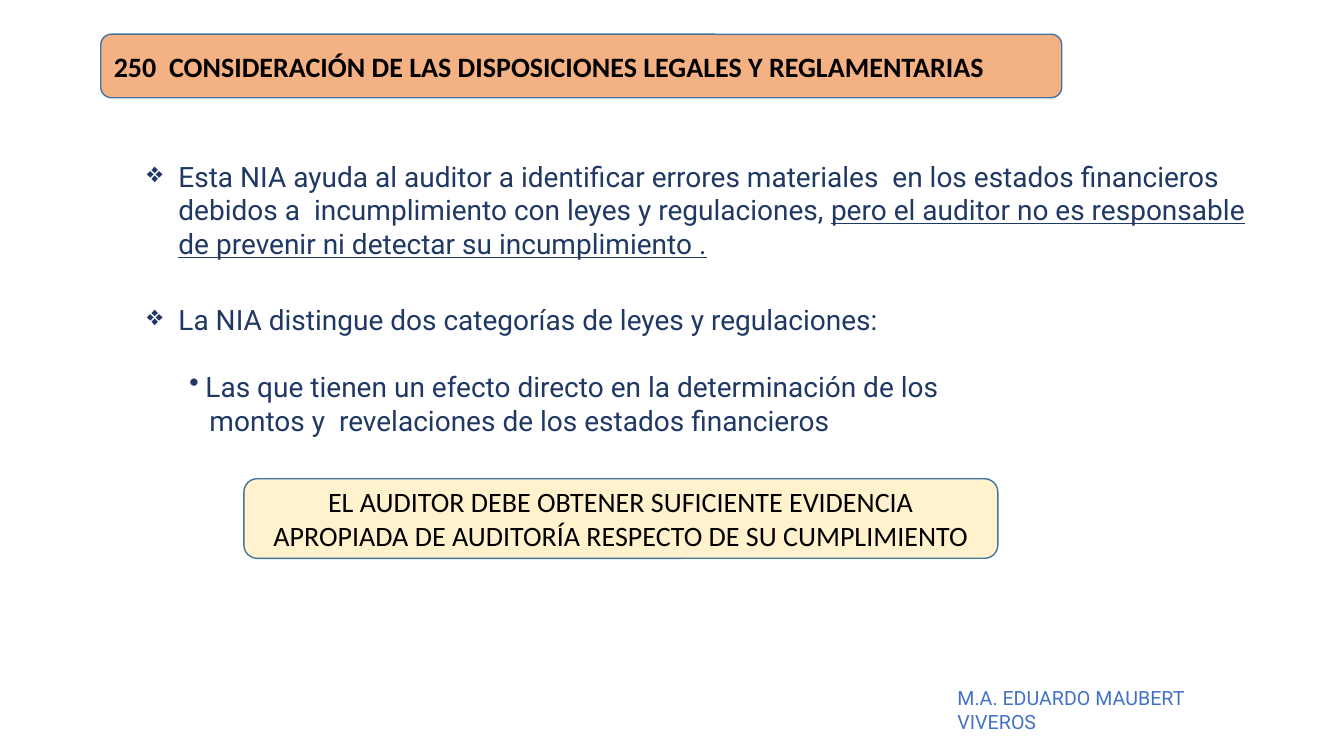
"""Build the slide on NIA 250, laws and regulations."""
from dataclasses import dataclass

from lxml import etree
from pptx import Presentation
from pptx.dml.color import RGBColor
from pptx.enum.shapes import MSO_SHAPE
from pptx.enum.text import MSO_ANCHOR, MSO_AUTO_SIZE, PP_ALIGN
from pptx.oxml.ns import qn
from pptx.slide import Slide
from pptx.text.text import TextFrame
from pptx.util import Inches, Pt

ROUND = MSO_SHAPE.ROUNDED_RECTANGLE
MIDDLE, TOP = MSO_ANCHOR.MIDDLE, MSO_ANCHOR.TOP
LEFT, CENTER = PP_ALIGN.LEFT, PP_ALIGN.CENTER
GROW = MSO_AUTO_SIZE.SHAPE_TO_FIT_TEXT
WIDE, HIGH = Inches(13.33), Inches(7.5)


@dataclass(frozen=True)
class Theme:
    """Colours, fonts and type sizes."""
    navy: str = "203864"
    blue: str = "4472C4"
    black: str = "000000"
    edge: str = "43739E"
    peach: str = "F4B183"
    cream: str = "FFF2CC"
    head: str = "Calibri"
    body: str = "Roboto"
    large: int = 20
    small: int = 14
    line: int = 1


THEME = Theme()


@dataclass(frozen=True)
class Area:
    """A place on the slide, in percent of its width and height."""
    left: float
    top: float
    width: float
    height: float

    def box(self) -> tuple[int, int, int, int]:
        """Give the place as slide lengths."""
        return (across(self.left), down(self.top),
                across(self.width), down(self.height))


@dataclass(frozen=True)
class Style:
    """The look of a text."""
    font: str
    color: str
    size: int = THEME.large
    bold: bool = False
    align: PP_ALIGN = LEFT


@dataclass(frozen=True)
class Span:
    """A run of text."""
    text: str
    under: bool = False


@dataclass(frozen=True)
class Para:
    """A paragraph, with indents in percent of the slide's width."""
    spans: tuple[Span, ...]
    bullet: str = ""
    margin: float = 0
    hang: float = 0
    before: int = 0


@dataclass(frozen=True)
class Block:
    """A text box, or a filled panel if a fill is given."""
    area: Area
    style: Style
    paras: tuple[Para, ...]
    fill: str = ""


def across(share: float) -> int:
    """Turn a percent of the width into a length."""
    return round(WIDE * share / 100)


def down(share: float) -> int:
    """Turn a percent of the height into a length."""
    return round(HIGH * share / 100)


def rgb(code: str) -> RGBColor:
    """Turn a hex code into a colour."""
    return RGBColor.from_string(code)


def write(frame: TextFrame, style: Style, paras: tuple[Para, ...]) -> None:
    """Fill a text frame run by run."""
    for index, para in enumerate(paras):
        item = frame.add_paragraph() if index else frame.paragraphs[0]
        item.alignment = style.align
        item.space_before = Pt(para.before)
        props = item._p.get_or_add_pPr()
        props.set("marL", str(across(para.margin)))
        props.set("indent", str(-across(para.hang)))
        if para.bullet:
            mark = etree.SubElement(props, qn("a:buChar"))
            mark.set("char", para.bullet)
        for span in para.spans:
            run = item.add_run()
            run.text = span.text
            font = run.font
            font.name, font.size = style.font, Pt(style.size)
            font.bold = style.bold
            font.underline = span.under
            font.color.rgb = rgb(style.color)


def draw(slide: Slide, block: Block) -> None:
    """Draw one block."""
    if block.fill:
        shape = slide.shapes.add_shape(ROUND, *block.area.box())
        shape.shadow.inherit = False
        shape.fill.solid()
        shape.fill.fore_color.rgb = rgb(block.fill)
        shape.line.color.rgb = rgb(THEME.edge)
        shape.line.width = Pt(THEME.line)
    else:
        shape = slide.shapes.add_textbox(*block.area.box())
        shape.text_frame.auto_size = GROW
    frame = shape.text_frame
    frame.word_wrap = True
    frame.vertical_anchor = MIDDLE if block.fill else TOP
    write(frame, block.style, block.paras)


BODY = Style(THEME.body, THEME.navy)
GAP = 24

BLOCKS = (
    Block(Area(10.2, 20.4, 85.9, 14.8), BODY, (
        Para((
            Span("Esta NIA ayuda al auditor a identificar errores materiales  en los "
                 "estados financieros debidos a  incumplimiento con leyes y regulaciones, "),
            Span("pero el auditor no es responsable de prevenir ni detectar "
                 "su incumplimiento .", True),
        ), "❖", 2.34, 2.34),
    )),
    Block(Area(7.5, 4.53, 71.5, 8.4), Style(THEME.head, THEME.black, bold=True), (
        Para((Span("250  CONSIDERACIÓN DE LAS DISPOSICIONES LEGALES Y REGLAMENTARIAS"),)),
    ), THEME.peach),
    Block(Area(70.5, 90.13, 23.7, 4.53), Style(THEME.body, THEME.blue, THEME.small), (
        Para((Span("M.A. EDUARDO MAUBERT VIVEROS"),)),
    )),
    Block(Area(10.2, 39.33, 85.9, 19.33), BODY, (
        Para((Span("La NIA distingue dos categorías de leyes y regulaciones:"),),
             "❖", 2.34, 2.34),
        Para((Span("Las que tienen un efecto directo en la determinación de los"),),
             "•", 4.35, 1.2, GAP),
        Para((Span("montos y  revelaciones de los estados financieros"),), margin=4.65),
    )),
    Block(Area(18.15, 63.33, 56.1, 10.53),
          Style(THEME.head, THEME.black, align=CENTER), (
        Para((Span("EL AUDITOR DEBE OBTENER SUFICIENTE EVIDENCIA APROPIADA "
                   "DE AUDITORÍA RESPECTO DE SU CUMPLIMIENTO"),)),
    ), THEME.cream),
)


def main() -> None:
    """Build and save the slide."""
    deck = Presentation()
    deck.slide_width, deck.slide_height = WIDE, HIGH
    slide = deck.slides.add_slide(deck.slide_layouts[6])
    for block in BLOCKS:
        draw(slide, block)
    deck.save("out.pptx")


if __name__ == "__main__":
    main()
